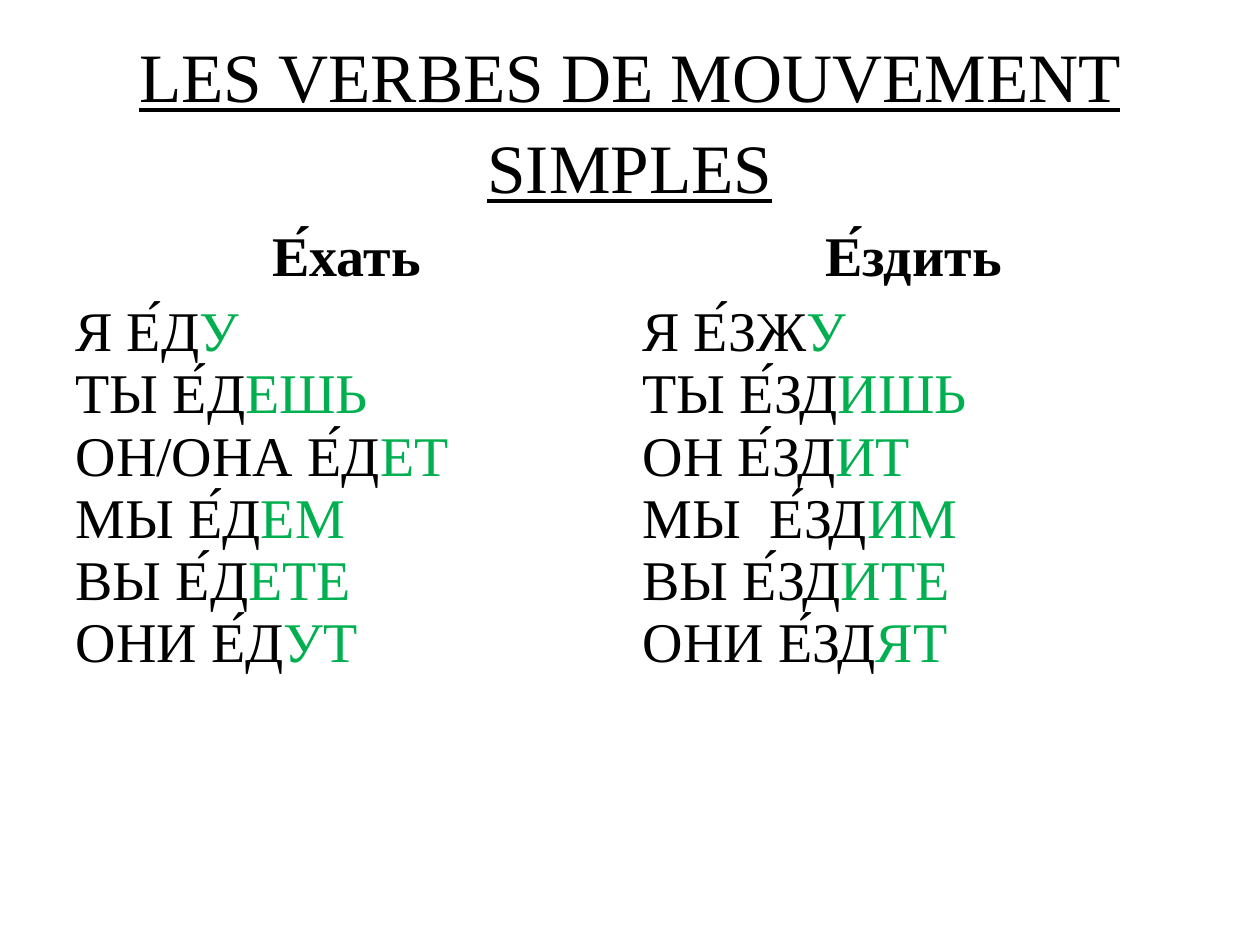
from pptx import Presentation
from pptx.dml.color import RGBColor
from pptx.enum.text import MSO_ANCHOR, PP_ALIGN
from pptx.util import Inches, Pt

CENTER, LEFT = PP_ALIGN.CENTER, PP_ALIGN.LEFT
MIDDLE = MSO_ANCHOR.MIDDLE
BLACK, GREEN = "000000", "00B050"

# Each verb: infinitive, then (pronoun and stem, ending)
VERBS = [
    ("Е́хать", [("Я Е́Д", "У"), ("ТЫ Е́Д", "ЕШЬ"), ("ОН/ОНА Е́Д", "ЕТ"),
               ("МЫ Е́Д", "ЕМ"), ("ВЫ Е́Д", "ЕТЕ"), ("ОНИ Е́Д", "УТ")]),
    ("Е́здить", [("Я Е́ЗЖ", "У"), ("ТЫ Е́ЗД", "ИШЬ"), ("ОН Е́ЗД", "ИТ"),
                ("МЫ  Е́ЗД", "ИМ"), ("ВЫ Е́ЗД", "ИТЕ"), ("ОНИ Е́ЗД", "ЯТ")]),
]


def rgb(value):
    return RGBColor.from_string(value)


class Deck:
    font = "Times New Roman"
    title_size = 39.6
    cell_size = 32

    def __init__(self, prs):
        self.s = prs.slides.add_slide(prs.slide_layouts[5])

    def run(self, p, text, size, color=BLACK, bold=False, underline=False):
        r = p.add_run()
        r.text = text
        f = r.font
        f.name, f.size, f.bold, f.underline = self.font, Pt(size), bold, underline
        f.color.rgb = rgb(color)

    def title(self, text, left, top, width, height):
        sp = self.s.shapes.title
        sp.left, sp.top = Inches(left), Inches(top)
        sp.width, sp.height = Inches(width), Inches(height)
        tf = sp.text_frame
        tf.word_wrap = True
        tf.vertical_anchor = MIDDLE
        p = tf.paragraphs[0]
        p.alignment = CENTER
        p.line_spacing = 1.09
        self.run(p, text, self.title_size, underline=True)

    def cell(self, cell, lines, align=LEFT, bold=False):
        cell.fill.background()
        tf = cell.text_frame
        for i, line in enumerate(lines):
            p = tf.add_paragraph() if i else tf.paragraphs[0]
            p.alignment = align
            for text, color in zip(line, (BLACK, GREEN)):
                self.run(p, text, self.cell_size, color, bold)

    def verb_table(self, verbs, left, top, width, height, row_height):
        frame = self.s.shapes.add_table(2, len(verbs), Inches(left), Inches(top),
                                        Inches(width), Inches(height))
        table = frame.table
        table.first_row = table.horz_banding = False
        for row in table.rows:
            row.height = Inches(row_height)
        frame.height = Inches(height)
        for col, (infinitive, forms) in enumerate(verbs):
            self.cell(table.cell(0, col), [(infinitive,)], CENTER, bold=True)
            self.cell(table.cell(1, col), forms)


def main():
    prs = Presentation()
    prs.slide_width, prs.slide_height = Inches(10), Inches(7.5)
    deck = Deck(prs)

    # Title
    deck.title("LES VERBES DE MOUVEMENT SIMPLES", 0.5, 0.3, 9, 1.25)

    # Conjugations side by side
    deck.verb_table(VERBS, 0.5, 1.75, 9, 4.47, 0.41)

    prs.save("out.pptx")


if __name__ == "__main__":
    main()
